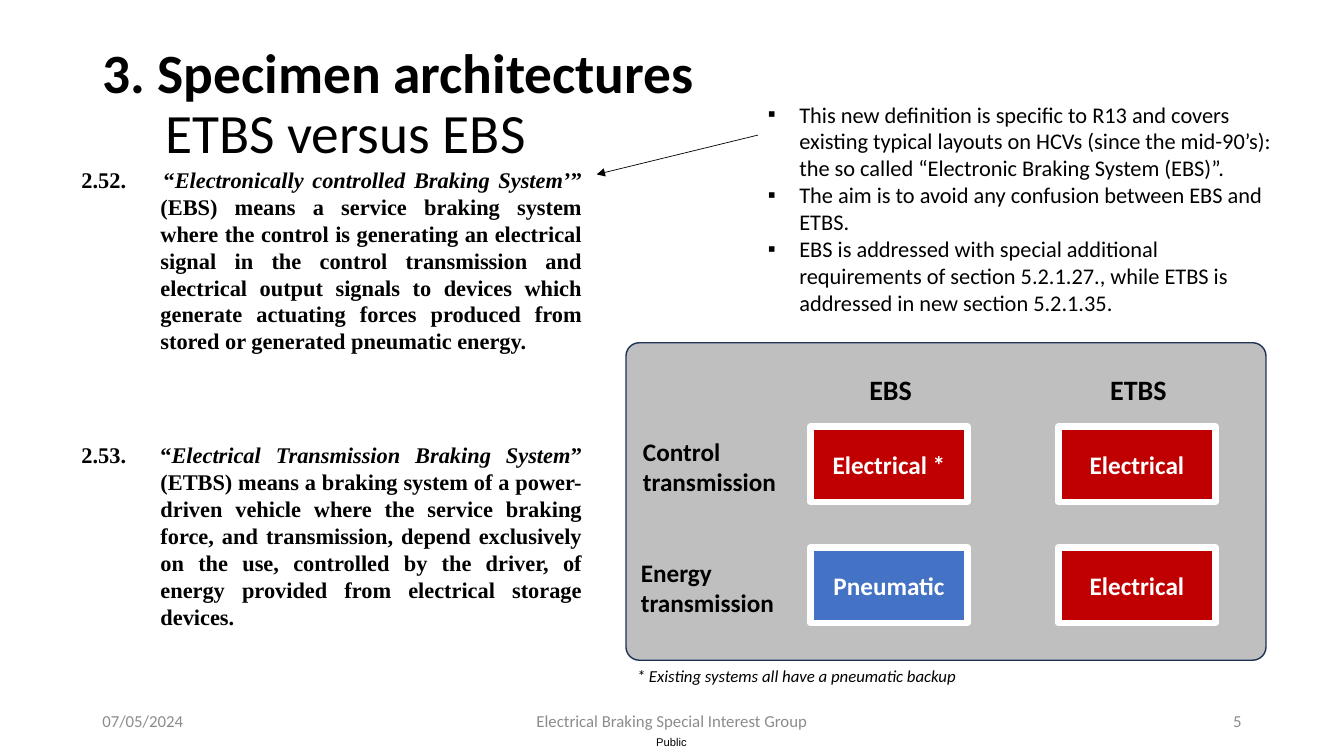
from dataclasses import dataclass

from lxml.etree import SubElement
from pptx import Presentation
from pptx.dml.color import RGBColor
from pptx.enum.shapes import MSO_CONNECTOR as Link, MSO_SHAPE as Shape
from pptx.enum.text import MSO_ANCHOR as Anchor, PP_ALIGN as Align
from pptx.oxml.ns import qn
from pptx.util import Pt


@dataclass(frozen=True)
class Theme:
    black: str = "000000"
    white: str = "FFFFFF"
    muted: str = "8C8C8C"
    panel: str = "BFBFBF"
    panel_edge: str = "1E3256"
    electrical: str = "C00000"
    pneumatic: str = "4472C4"
    sans: str = "Calibri"
    serif: str = "Times New Roman"
    label: str = "Arial"
    title: float = 39.6
    heading: float = 20
    cell: float = 18
    body: float = 16
    small: float = 12
    tiny: float = 8


theme = Theme()


def add_run(para, text, size, color=theme.black, font=theme.sans, bold=False, italic=False):
    span = para.add_run()
    span.text = text
    span.font.size = Pt(size)
    span.font.name = font
    span.font.bold = bold
    span.font.italic = italic
    span.font.color.rgb = RGBColor.from_string(color)


def add_box(page, left, top, width, height, anchor=Anchor.TOP, wrap=True):
    frame = page.shapes.add_textbox(Pt(left), Pt(top), Pt(width), Pt(height)).text_frame
    frame.word_wrap = wrap
    frame.vertical_anchor = anchor
    return frame


deck = Presentation()
deck.slide_width, deck.slide_height = Pt(960), Pt(540)
page = deck.slides.add_slide(deck.slide_layouts[6])

# Classification label
frame = add_box(page, 468.7, 525.6, 24.5, 9.4, wrap=False)
frame.margin_left = frame.margin_right = frame.margin_top = frame.margin_bottom = 0
add_run(frame.paragraphs[0], "Public", theme.tiny, font=theme.label)

# Title, with its second line indented
frame = add_box(page, 66, 28.8, 828, 104.4)
title_lines = [("3. Specimen architectures", True, 0), ("ETBS versus EBS", False, 45)]
for index, (text, bold, indent) in enumerate(title_lines):
    para = frame.add_paragraph() if index else frame.paragraphs[0]
    para.line_spacing = 0.9
    para._p.get_or_add_pPr().set("marL", str(Pt(indent)))
    add_run(para, text, theme.title, bold=bold)

# Footer
for left, width, align, text in [
    (66, 216, Align.LEFT, "07/05/2024"),
    (318, 324, Align.CENTER, "Electrical Braking Special Interest Group"),
    (678, 216, Align.RIGHT, "5"),
]:
    para = add_box(page, left, 500.5, width, 28.8, Anchor.MIDDLE).paragraphs[0]
    para.alignment = align
    add_run(para, text, theme.small, theme.muted)

# Definitions with hanging numbers
for top, number, term, meaning in [
    (311.8, "2.53.\t“", "Electrical Transmission Braking System",
     "” (ETBS) means a braking system of a power-driven vehicle where the service "
     "braking force, and transmission, depend exclusively on the use, controlled by "
     "the driver, of energy provided from electrical storage devices."),
    (115.2, "2.52. \t“", "Electronically controlled Braking System’",
     "” (EBS) means a service braking system where the control is generating an "
     "electrical signal in the control transmission and electrical output signals to "
     "devices which generate actuating forces produced from stored or generated "
     "pneumatic energy."),
]:
    para = add_box(page, 51.1, top, 445.7, 143.3).paragraphs[0]
    para.alignment = Align.JUSTIFY
    para.space_after = Pt(6)
    settings = para._p.get_or_add_pPr()
    for name, points in [("marL", 56.4), ("indent", -56.4), ("marR", 74)]:
        settings.set(name, str(Pt(points)))
    for text, italic in [(number, False), (term, True), (meaning, False)]:
        add_run(para, text, theme.body, font=theme.serif, bold=True, italic=italic)

# Remarks
frame = add_box(page, 541.4, 68.4, 382.3, 162.7)
remarks = [
    "This new definition is specific to R13 and covers existing typical layouts on HCVs "
    "(since the mid-90’s): the so called “Electronic Braking System (EBS)”.",
    "The aim is to avoid any confusion between EBS and ETBS.",
    "EBS is addressed with special additional requirements of section 5.2.1.27., while "
    "ETBS is addressed in new section 5.2.1.35.",
]
for index, text in enumerate(remarks):
    para = frame.add_paragraph() if index else frame.paragraphs[0]
    settings = para._p.get_or_add_pPr()
    settings.set("marL", str(Pt(22.5)))
    settings.set("indent", str(Pt(-22.5)))
    SubElement(settings, qn("a:buFont")).set("typeface", theme.label)
    SubElement(settings, qn("a:buChar")).set("char", "▪")
    add_run(para, text, theme.body)

# Arrow from the remarks to the EBS definition
arrow = page.shapes.add_connector(Link.STRAIGHT, Pt(541.4), Pt(96.5), Pt(426.2), Pt(124.6))
arrow.line.width = Pt(0.5)
arrow.line.color.rgb = RGBColor.from_string(theme.black)
SubElement(arrow.line._get_or_add_ln(), qn("a:tailEnd")).set("type", "triangle")
SubElement(arrow._element.spPr, qn("a:effectLst"))

# Comparison panel
panel = page.shapes.add_shape(Shape.ROUNDED_RECTANGLE, Pt(447.1), Pt(244.8), Pt(457.2), Pt(226.8))
panel.adjustments[0] = 0.042
panel.shadow.inherit = False
panel.fill.solid()
panel.fill.fore_color.rgb = RGBColor.from_string(theme.panel)
panel.line.color.rgb = RGBColor.from_string(theme.panel_edge)
panel.line.width = Pt(1)

# Comparison grid: column headings, row labels and cells
cell_width, cell_height = 112.3, 54
columns = [("EBS", 578.9, 45.4), ("ETBS", 756, 55.4)]
rows = [
    ("Control transmission", 452.2, 304.6,
     [("Electrical *", theme.electrical), ("Electrical", theme.electrical)]),
    ("Energy transmission", 450.7, 391,
     [("Pneumatic", theme.pneumatic), ("Electrical", theme.electrical)]),
]
for heading, left, width in columns:
    center = left + cell_width / 2 + 1.5
    para = add_box(page, center - width / 2, 262.8, width, 31.7, wrap=False).paragraphs[0]
    add_run(para, heading, theme.heading, bold=True)

for label, label_left, top, cells in rows:
    para = add_box(page, label_left, top + 3.2, 136, 51.1).paragraphs[0]
    add_run(para, label, theme.cell, bold=True)
    for (heading, left, width), (text, color) in zip(columns, cells):
        cell = page.shapes.add_shape(Shape.RECTANGLE, Pt(left), Pt(top), Pt(cell_width), Pt(cell_height))
        cell.shadow.inherit = False
        cell.fill.solid()
        cell.fill.fore_color.rgb = RGBColor.from_string(color)
        cell.line.color.rgb = RGBColor.from_string(theme.white)
        cell.line.width = Pt(4.5)
        cell.text_frame.vertical_anchor = Anchor.MIDDLE
        para = cell.text_frame.paragraphs[0]
        para.alignment = Align.CENTER
        add_run(para, text, theme.cell, theme.white, bold=True)

# Footnote
para = add_box(page, 447.8, 472.3, 244.8, 21.6, wrap=False).paragraphs[0]
add_run(para, "* Existing systems all have a pneumatic backup", theme.small, italic=True)

deck.save("out.pptx")
